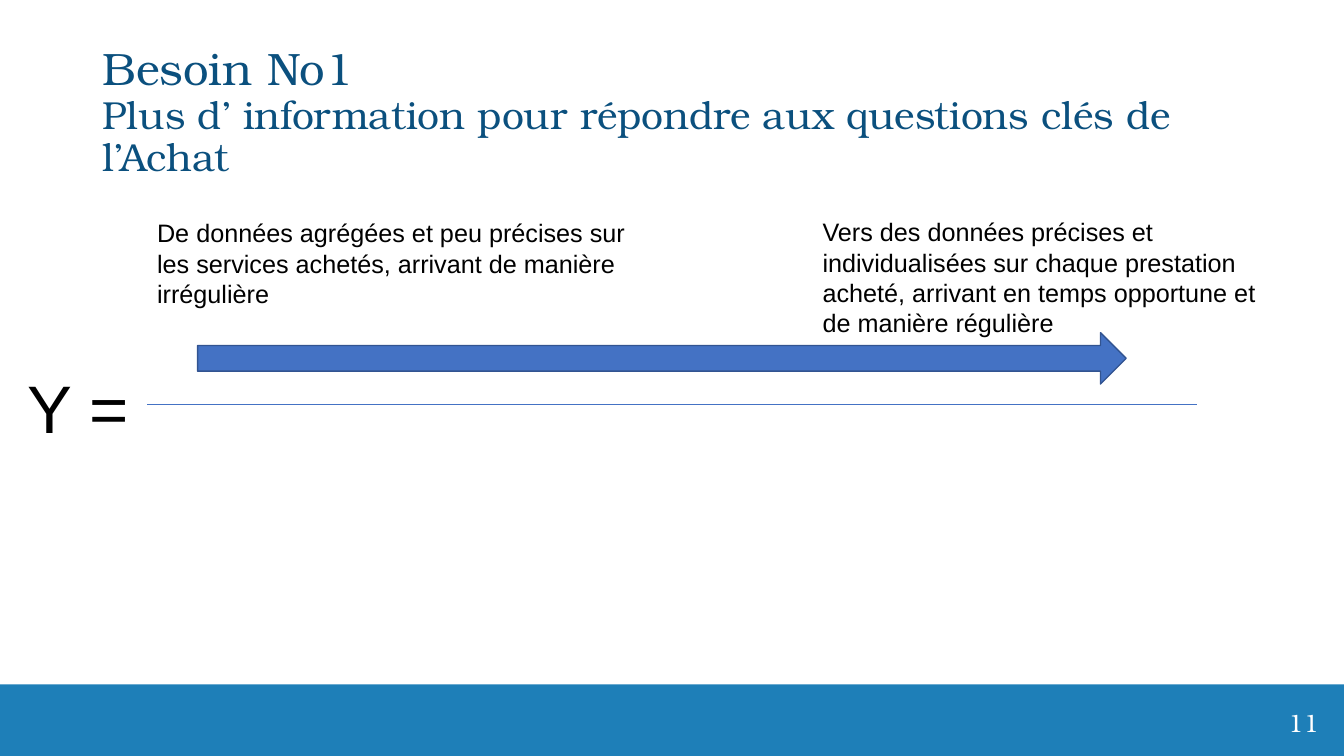
from pptx import Presentation
from pptx import util as u
from pptx.dml.color import RGBColor
from pptx.enum import shapes, text
from pptx.oxml.ns import qn
from lxml import etree

WHITE = RGBColor(0xFF, 0xFF, 0xFF)
BLACK = RGBColor(0x00, 0x00, 0x00)
NAVY = RGBColor(0x0B, 0x50, 0x7E)
BAND_BLUE = RGBColor(0x1E, 0x7F, 0xB8)
ARROW_BLUE = RGBColor(0x44, 0x72, 0xC4)
ARROW_EDGE = RGBColor(0x32, 0x54, 0x91)


class Page:
    """Holds the style and the current slide."""
    heading_font = "TeX Gyre Bonum"
    body_font = "Arial"

    def __init__(self, deck):
        self.slide = deck.slides.add_slide(deck.slide_layouts[5])
        self.shapes = self.slide.shapes

    def style(self, para, size, color, font):
        para.font.size = u.Pt(size)
        para.font.color.rgb = color
        para.font.name = font

    def title(self, first, second, left, top, width, height):
        box = self.shapes.title
        box.left, box.top = u.Inches(left), u.Inches(top)
        box.width, box.height = u.Inches(width), u.Inches(height)
        frame = box.text_frame
        frame.auto_size = text.MSO_AUTO_SIZE.NONE
        frame.word_wrap = True
        frame.vertical_anchor = text.MSO_ANCHOR.MIDDLE
        para = frame.paragraphs[0]
        para.alignment = text.PP_ALIGN.LEFT
        para.line_spacing = 0.9
        self.style(para, 32.4, NAVY, self.heading_font)
        para.add_run().text = first
        para.add_line_break()
        span = para.add_run()
        span.text = second
        span.font.size = u.Pt(27.9)

    def label(self, words, left, top, width, height, size=18, color=BLACK,
              font=body_font, align=text.PP_ALIGN.LEFT, wrap=True):
        box = self.shapes.add_textbox(u.Inches(left), u.Inches(top),
                                      u.Inches(width), u.Inches(height))
        frame = box.text_frame
        frame.word_wrap = wrap
        frame.auto_size = text.MSO_AUTO_SIZE.SHAPE_TO_FIT_TEXT
        para = frame.paragraphs[0]
        para.text = words
        para.alignment = align
        self.style(para, size, color, font)

    def block(self, kind, left, top, width, height, fill, edge=None):
        shape = self.shapes.add_shape(kind, u.Inches(left), u.Inches(top),
                                      u.Inches(width), u.Inches(height))
        shape.shadow.inherit = False
        shape.fill.solid()
        shape.fill.fore_color.rgb = fill
        if edge is None:
            shape.line.fill.background()
        else:
            shape.line.color.rgb = edge
            shape.line.width = u.Pt(1)

    def rule(self, left, right, y, color, weight):
        line = self.shapes.add_connector(
            shapes.MSO_CONNECTOR.STRAIGHT,
            u.Inches(left), u.Inches(y), u.Inches(right), u.Inches(y))
        line.line.color.rgb = color
        line.line.width = u.Pt(weight)
        etree.SubElement(line._element.spPr, qn("a:effectLst"))


def main():
    deck = Presentation()
    deck.slide_width, deck.slide_height = u.Inches(13.33), u.Inches(7.5)
    page = Page(deck)

    # Footer band and page number
    page.block(shapes.MSO_SHAPE.RECTANGLE, 0, 6.79, 13.33, 0.71, BAND_BLUE)
    page.label("11", 12.46, 6.97, 0.72, 0.4, color=WHITE,
               font=page.heading_font, align=text.PP_ALIGN.RIGHT)

    # Progress arrow
    page.block(shapes.MSO_SHAPE.RIGHT_ARROW, 1.96, 3.3, 9.21, 0.51,
               ARROW_BLUE, ARROW_EDGE)

    # Fraction: left-hand side, the two states and the bar
    page.label("Y =", 0.17, 3.58, 1.41, 0.91, size=48, wrap=False)
    page.label("De données agrégées et peu précises sur les services achetés, "
               "arrivant de manière irrégulière", 1.46, 2.11, 5, 1.01)
    page.label("Vers des données précises et individualisées sur chaque "
               "prestation acheté, arrivant en temps opportune et de manière "
               "régulière", 8.06, 2.1, 4.74, 1.31)
    page.rule(1.46, 11.87, 4.01, ARROW_BLUE, 0.5)

    # Title
    page.title("Besoin No1",
               "Plus d’ information pour répondre aux questions clés de l’Achat",
               0.92, 0.4, 11.5, 1.45)

    deck.save("out.pptx")


if __name__ == "__main__":
    main()
